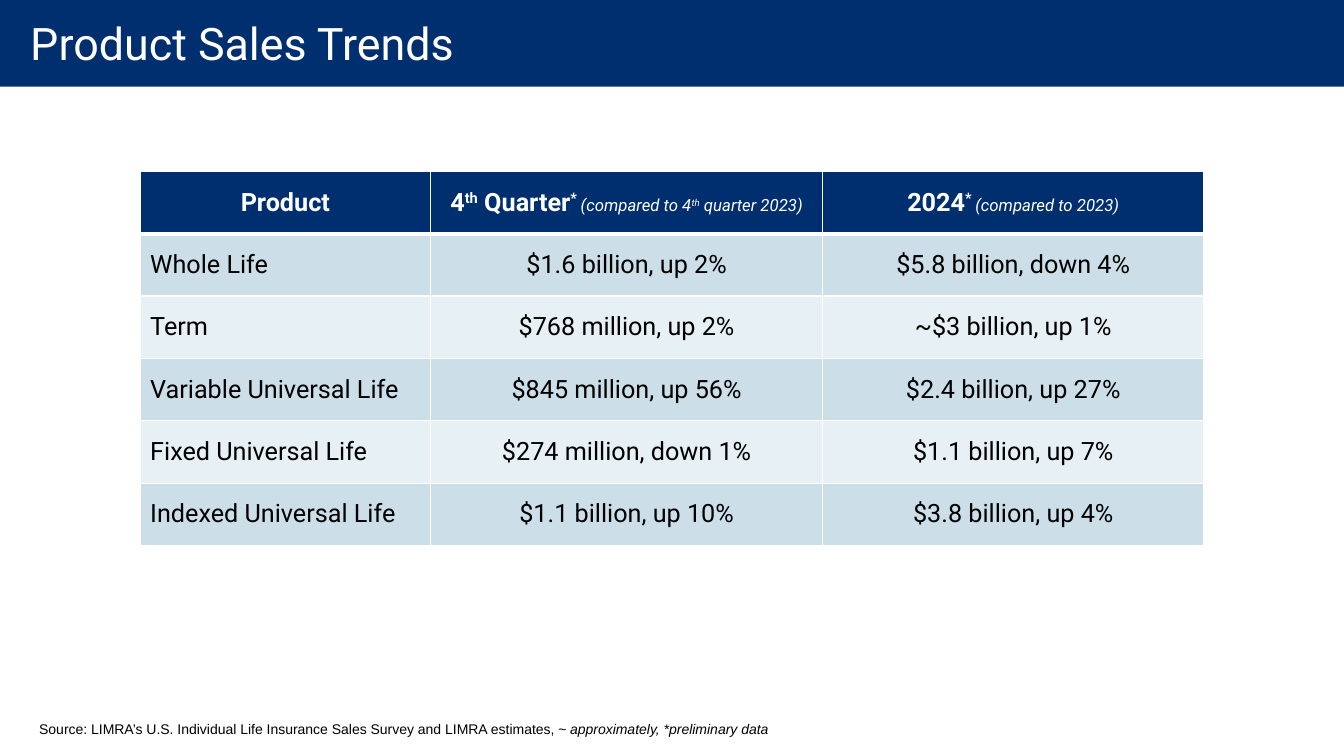
from dataclasses import dataclass

from lxml import etree
from pptx import Presentation
from pptx import util as u
from pptx.dml import color
from pptx.enum import shapes, text
from pptx.oxml import ns


@dataclass(frozen=True)
class Theme:
    navy: str = "002F70"
    white: str = "FFFFFF"
    black: str = "000000"
    bands: tuple = ("CCDFE9", "E7F0F4")
    heading_font: str = "Roboto"
    note_font: str = "Arial"
    title_size: int = 32
    table_size: int = 18
    remark_size: int = 12
    note_size: int = 10
    thin: int = 1
    thick: int = 3


TITLE = "Product Sales Trends"
# Each span is its text and the names of its traits.
HEADERS = [
    [("Product", "bold")],
    [("4", "bold"), ("th", "bold raised"), (" Quarter", "bold"), ("* ", "bold raised"),
     ("(compared to 4", "italic small"), ("th", "italic small raised"),
     (" quarter 2023)", "italic small")],
    [("2024", "bold"), ("* ", "bold raised"), ("(compared to 2023)", "italic small")],
]
SALES = [
    ("Whole Life", "$1.6 billion, up 2%", "$5.8 billion, down 4%"),
    ("Term", "$768 million, up 2%", "~$3 billion, up 1%"),
    ("Variable Universal Life", "$845 million, up 56%", "$2.4 billion, up 27%"),
    ("Fixed Universal Life", "$274 million, down 1%", "$1.1 billion, up 7%"),
    ("Indexed Universal Life", "$1.1 billion, up 10%", "$3.8 billion, up 4%"),
]
SOURCE = [
    ("Source: LIMRA’s U.S. Individual Life Insurance Sales Survey and LIMRA estimates, ", ""),
    ("~ approximately, *preliminary data", "italic"),
]


class SlideBuilder:
    """Draws on one page; all lengths are percentages of the slide's width or height."""

    def __init__(self, deck, theme):
        self.theme = theme
        self.width, self.height = deck.slide_width, deck.slide_height
        self.page = deck.slides.add_slide(deck.slide_layouts[5])

    def across(self, share):
        return u.Emu(round(self.width * share / 100))

    def down(self, share):
        return u.Emu(round(self.height * share / 100))

    def area(self, left, top, width, height):
        return self.across(left), self.down(top), self.across(width), self.down(height)

    def paint(self, target, shade):
        target.fill.solid()
        target.fill.fore_color.rgb = color.RGBColor.from_string(shade)

    def add_spans(self, para, spans, font, size, shade):
        for words, traits in spans:
            span = para.add_run()
            span.text = words
            span.font.name = font
            span.font.size = u.Pt(self.theme.remark_size if "small" in traits else size)
            span.font.bold = "bold" in traits
            span.font.italic = "italic" in traits
            span.font.color.rgb = color.RGBColor.from_string(shade)
            if "raised" in traits:
                span.font._element.set("baseline", "30000")

    def title(self, words):
        theme = self.theme
        box = self.page.shapes.title
        box.left, box.top, box.width, box.height = self.area(0, -0.8, 100, 12.93)
        frame = box.text_frame
        frame.auto_size = text.MSO_AUTO_SIZE.NONE
        frame.word_wrap = True
        frame.vertical_anchor = text.MSO_ANCHOR.MIDDLE
        frame.margin_left, frame.margin_right = u.Inches(0.3), u.Inches(0.2)
        frame.margin_top = frame.margin_bottom = 0
        para = frame.paragraphs[0]
        para.alignment = text.PP_ALIGN.LEFT
        self.add_spans(para, [(words, "")], theme.heading_font, theme.title_size, theme.white)

    def banner(self, height):
        """Place a full-width band behind the title."""
        band = self.page.shapes.add_shape(
            shapes.MSO_SHAPE.RECTANGLE, *self.area(0, 0, 100, height))
        band.shadow.inherit = False
        band.line.fill.background()
        self.paint(band, self.theme.navy)
        self.page.shapes.title.element.addprevious(band.element)

    def note(self, spans, *place):
        theme = self.theme
        box = self.page.shapes.add_textbox(*self.area(*place))
        box.text_frame.word_wrap = True
        self.add_spans(box.text_frame.paragraphs[0], spans,
                       theme.note_font, theme.note_size, theme.black)

    def rule_cell(self, cell, top, bottom):
        properties = cell._tc.get_or_add_tcPr()
        thin = self.theme.thin
        for side, weight in (("L", thin), ("R", thin), ("T", top), ("B", bottom)):
            line = etree.SubElement(properties, ns.qn(f"a:ln{side}"), w=str(u.Pt(weight)))
            fill = etree.SubElement(line, ns.qn("a:solidFill"))
            etree.SubElement(fill, ns.qn("a:srgbClr"), val=self.theme.white)

    def table(self, headers, records, left, top, widths, row_height):
        theme = self.theme
        rows = [headers] + [[[(words, "")] for words in record] for record in records]
        place = self.area(left, top, sum(widths), row_height * len(rows))
        grid = self.page.shapes.add_table(len(rows), len(widths), *place).table
        for column, width in zip(grid.columns, widths):
            column.width = self.across(width)
        for r, row in enumerate(rows):
            grid.rows[r].height = self.down(row_height)
            is_header = r == 0
            for c, spans in enumerate(row):
                cell = grid.cell(r, c)
                self.rule_cell(cell, theme.thick if r == 1 else theme.thin,
                               theme.thick if is_header else theme.thin)
                self.paint(cell, theme.navy if is_header else theme.bands[(r - 1) % 2])
                cell.vertical_anchor = text.MSO_ANCHOR.MIDDLE
                para = cell.text_frame.paragraphs[0]
                centred = is_header or c > 0
                para.alignment = text.PP_ALIGN.CENTER if centred else text.PP_ALIGN.LEFT
                self.add_spans(para, spans, theme.heading_font, theme.table_size,
                               theme.white if is_header else theme.black)


def main():
    deck = Presentation()
    deck.slide_width, deck.slide_height = u.Inches(13.33), u.Inches(7.5)
    slide = SlideBuilder(deck, Theme())
    slide.title(TITLE)
    slide.banner(11.47)
    slide.note(SOURCE, 2.18, 94.67, 74.12, 3.6)
    slide.table(HEADERS, SALES, 10.43, 22.67, (21.61, 29.18, 28.36), 8.25)
    deck.save("out.pptx")


if __name__ == "__main__":
    main()
